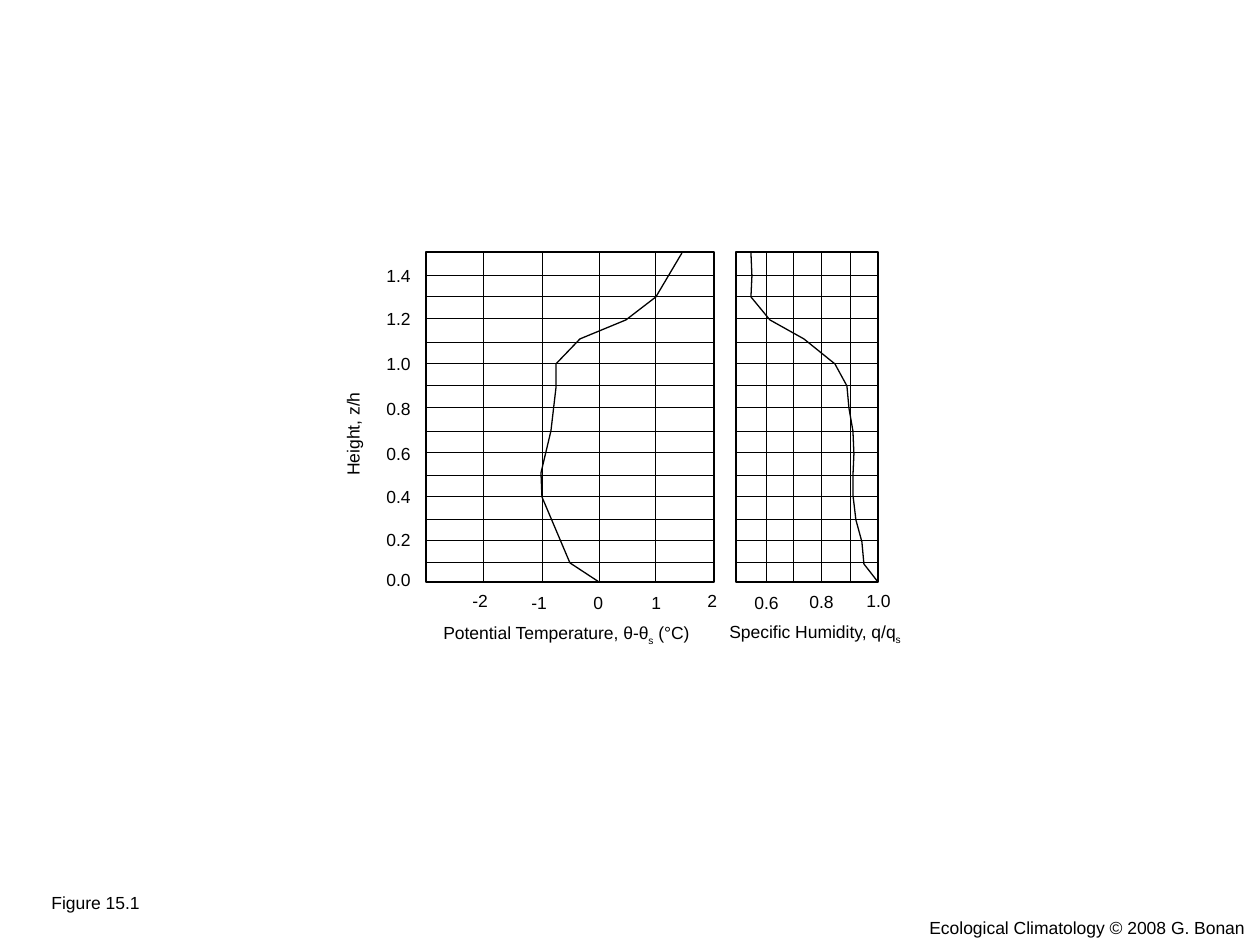
from lxml import etree
from pptx import Presentation
from pptx.dml.color import RGBColor
from pptx.enum.shapes import MSO_CONNECTOR, MSO_SHAPE
from pptx.enum.text import MSO_AUTO_SIZE
from pptx.oxml.ns import qn
from pptx.util import Emu, Pt

STRAIGHT, RECT = MSO_CONNECTOR.STRAIGHT, MSO_SHAPE.RECTANGLE
FIT = MSO_AUTO_SIZE.SHAPE_TO_FIT_TEXT
SCALE = 914400 / 126  # EMU per px
COLORS = {"ink": "000000"}
FONT, SIZE = "Arial", 10
HAIRLINE, OUTLINE = Pt(0.01), Pt(0.75)  # a width of 0 would fall back to the theme

# Content, lengths in px
TOP, HEIGHT, TEXT_H = 252, 330, 34
ROWS = [276, 297, 319, 343, 364, 386, 408, 432, 453, 476, 497, 520, 541, 563]
PANELS = [
    {  # potential temperature
        "left": 426, "width": 288, "columns": [484, 543, 600, 656],
        "profile": [(599, 582), (570, 563), (542, 497), (541, 473), (551, 431),
                    (556, 388), (556, 364), (580, 339), (626, 320), (656, 297),
                    (682, 253)],
    },
    {  # specific humidity
        "left": 736, "width": 142, "columns": [767, 794, 822, 851],
        "profile": [(878, 582), (864, 564), (862, 542), (856, 520), (853, 495),
                    (853, 476), (854, 454), (853, 431), (849, 408), (847, 386),
                    (835, 364), (804, 339), (770, 320), (751, 297), (752, 276),
                    (751, 253)],
    },
]
HEIGHT_LABELS = [("0.0", 563), ("0.2", 523), ("0.4", 480), ("0.6", 437),
                 ("0.8", 392), ("1.0", 347), ("1.2", 302), ("1.4", 259)]
# label, left, top, width
X_LABELS = [("-2", 460, 584, 44), ("-1", 519, 586, 44), ("0", 581, 586, 36),
            ("1", 639, 586, 36), ("2", 695, 584, 36),
            ("0.6", 742, 586, 50), ("0.8", 797, 585, 50), ("1.0", 854, 584, 50)]
# runs (text, is subscript), left, top, width, rotation
AXIS_TITLES = [
    ([("Height, z/h", False)], 296, 414, 114, 270),
    ([("Potential Temperature, θ-θ", False), ("s", True), (" (°C)", False)],
     431, 616, 276, 0),
    ([("Specific Humidity, q/q", False), ("s", True)], 717, 615, 202, 0),
]
CAPTION = ("Figure 15.1", 39, 886, 120)
CREDIT = ("Ecological Climatology © 2008 G. Bonan", 917, 911, 343)


def px(n):
    return Emu(round(n * SCALE))


def ink():
    return RGBColor.from_string(COLORS["ink"])


def add_text(shapes, runs, left, top, width, rotation=0, wrap=False):
    sp = shapes.add_textbox(px(left), px(top), px(width), px(TEXT_H))
    sp.rotation = rotation
    tf = sp.text_frame
    tf.word_wrap = wrap
    tf.auto_size = FIT
    p = tf.paragraphs[0]
    p.font.name, p.font.size = FONT, Pt(SIZE)
    p.font.color.rgb = ink()
    for text, subscript in runs:
        r = p.add_run()
        r.text = text
        if subscript:
            r.font._element.set("baseline", "-25000")


def add_grid_line(shapes, x1, y1, x2, y2):
    line = shapes.add_connector(STRAIGHT, px(x1), px(y1), px(x2), px(y2))
    line.line.color.rgb = ink()
    line.line.width = HAIRLINE
    etree.SubElement(line._element.spPr, qn("a:effectLst"))


def outline(sp):
    sp.fill.background()
    sp.line.color.rgb = ink()
    sp.line.width = OUTLINE
    sp.shadow.inherit = False


def add_panel(shapes, left, width, columns, profile):
    outline(shapes.add_shape(RECT, px(left), px(TOP), px(width), px(HEIGHT)))
    for y in ROWS:
        add_grid_line(shapes, left, y, left + width, y)
    for x in columns:
        add_grid_line(shapes, x, TOP + HEIGHT, x, TOP)
    points = [(px(x), px(y)) for x, y in profile]
    curve = shapes.build_freeform(*points[0])
    curve.add_line_segments(points[1:], close=False)
    outline(curve.convert_to_shape())


prs = Presentation()
prs.slide_width, prs.slide_height = px(1260), px(945)
s = prs.slides.add_slide(prs.slide_layouts[6])

# Figure: two profiles with shared height axis
figure = s.shapes.add_group_shape().shapes
for panel in PANELS:
    add_panel(figure, **panel)
for label, top in HEIGHT_LABELS:
    add_text(figure, [(label, False)], 374, top, 50)
for label, left, top, width in X_LABELS:
    add_text(figure, [(label, False)], left, top, width)
for runs, left, top, width, rotation in AXIS_TITLES:
    add_text(figure, runs, left, top, width, rotation)

# Caption and credit
for (text, left, top, width), wrap in ((CAPTION, True), (CREDIT, False)):
    add_text(s.shapes, [(text, False)], left, top, width, wrap=wrap)

prs.save("out.pptx")
